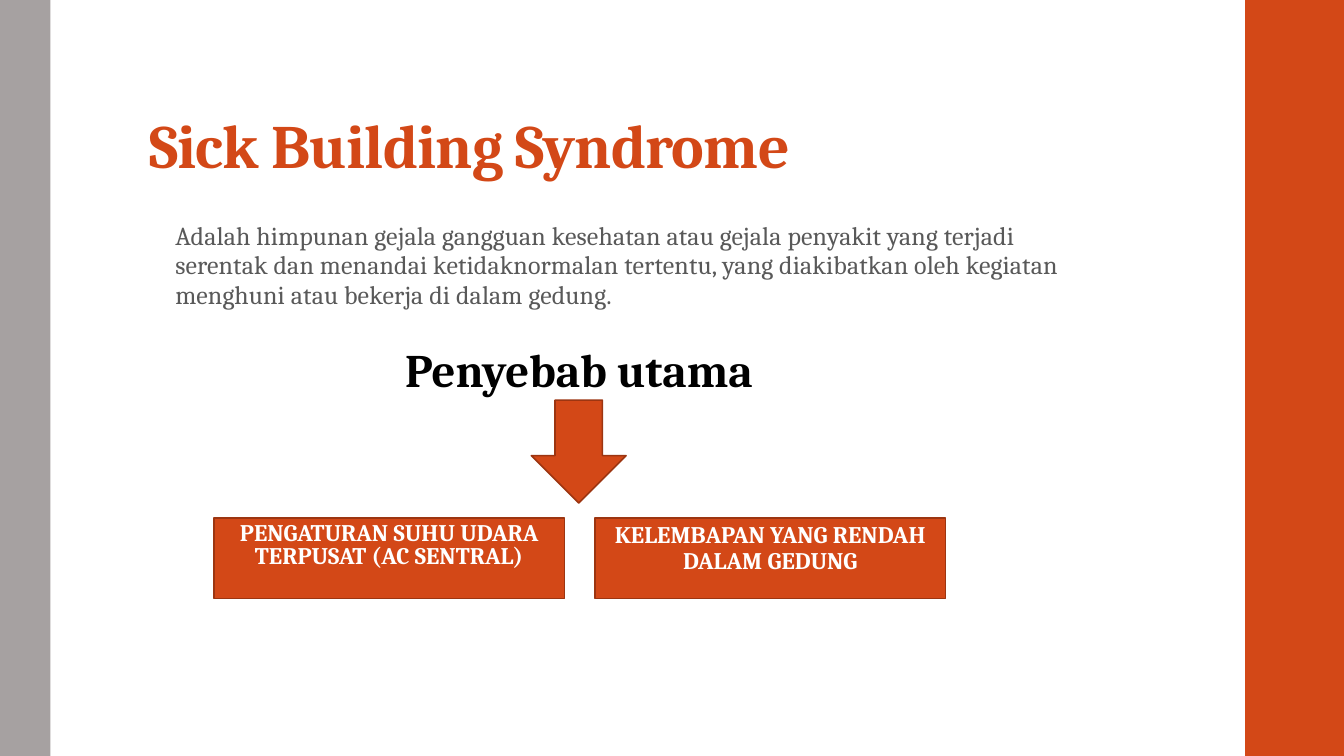
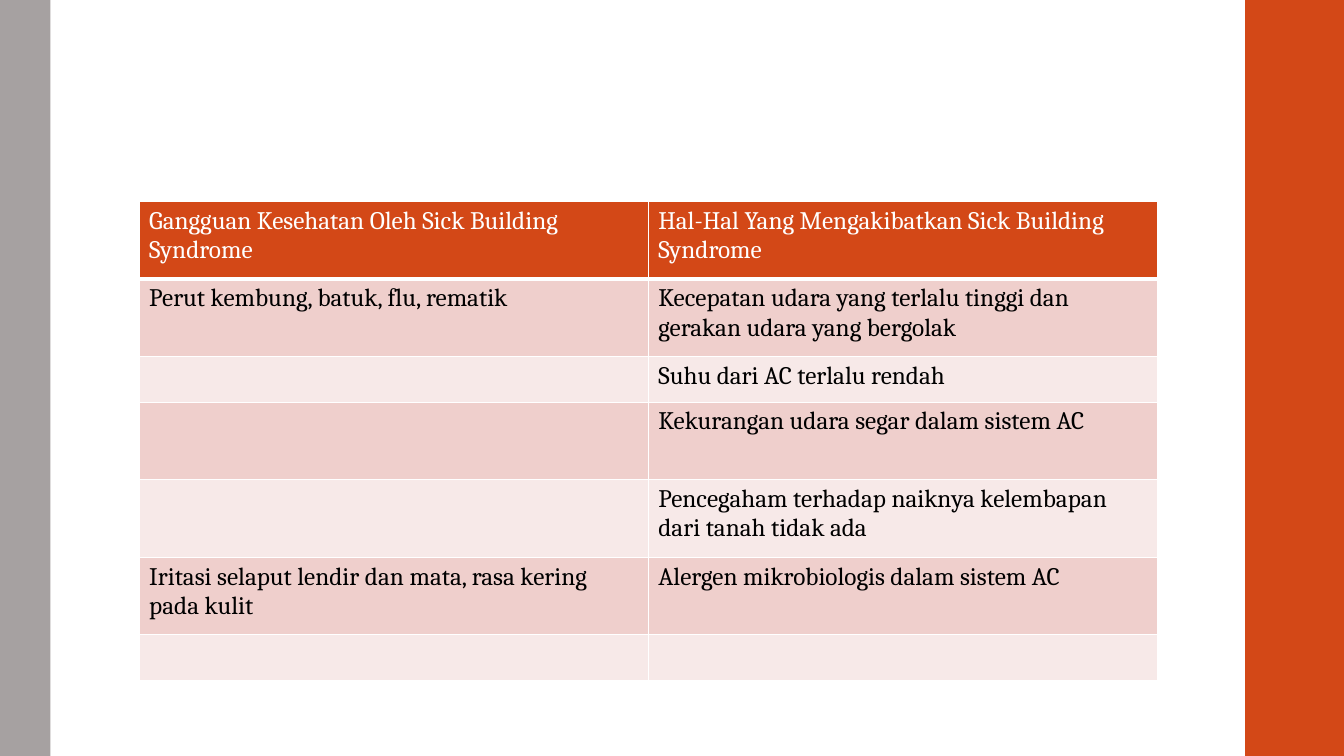
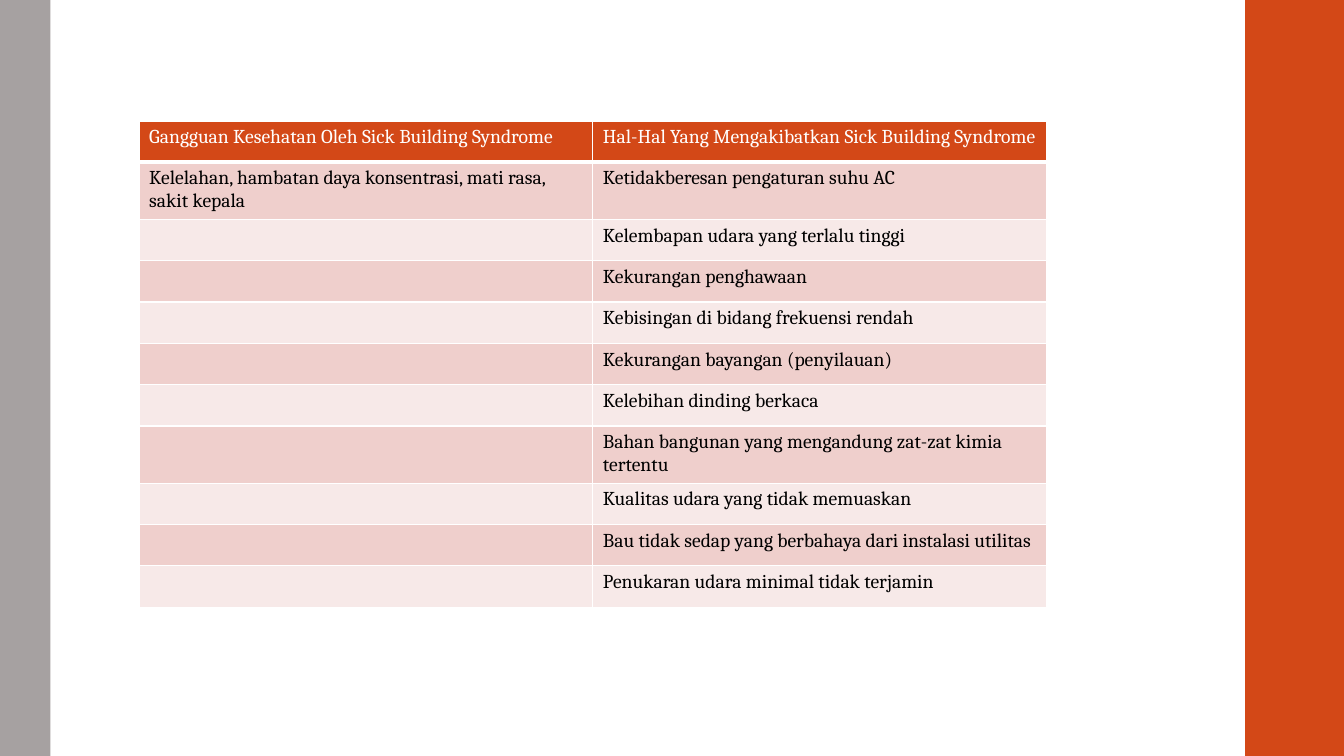
from lxml import etree
from pptx import Presentation
from pptx.dml.color import RGBColor
from pptx.enum.shapes import MSO_SHAPE
from pptx.enum.text import MSO_ANCHOR, PP_ALIGN
from pptx.oxml.ns import qn
from pptx.util import Inches, Pt

ORANGE = RGBColor(0xD3, 0x48, 0x17)
DARK_ORANGE = RGBColor(0x9C, 0x35, 0x11)
GREY = RGBColor(0xA6, 0xA1, 0xA1)
TEXT_GREY = RGBColor(0x59, 0x59, 0x59)
WHITE = RGBColor(0xFF, 0xFF, 0xFF)
BLACK = RGBColor(0, 0, 0)
ROW_TINTS = (RGBColor(0xF7, 0xE9, 0xE8), RGBColor(0xEF, 0xCF, 0xCC))

FONT = "Cambria"
RECTANGLE = MSO_SHAPE.RECTANGLE
DOWN_ARROW = MSO_SHAPE.DOWN_ARROW
TOP, MIDDLE, BOTTOM = MSO_ANCHOR.TOP, MSO_ANCHOR.MIDDLE, MSO_ANCHOR.BOTTOM
LEFT, CENTER = PP_ALIGN.LEFT, PP_ALIGN.CENTER

SLIDE_W, SLIDE_H = 13.33, 7.5
CONTENT_LEFT = 1.38
HEADINGS = (
    "Gangguan Kesehatan Oleh Sick Building Syndrome",
    "Hal-Hal Yang Mengakibatkan Sick Building Syndrome",
)


def style_font(paragraph, size, color, bold=False):
    font = paragraph.font
    font.name, font.size, font.bold = FONT, Pt(size), bold
    font.color.rgb = color


def write(shape, text, size, color, bold=False, align=LEFT, anchor=TOP,
          side=0.1, top=0.05, line_spacing=1.0, tracking=0):
    """Put one paragraph in a shape; side and top are its insets in inches."""
    frame = shape.text_frame
    frame.word_wrap = True
    frame.vertical_anchor = anchor
    frame.margin_left = frame.margin_right = Inches(side)
    frame.margin_top, frame.margin_bottom = Inches(top), Inches(0.05)
    paragraph = frame.paragraphs[0]
    run = paragraph.add_run()
    run.text = text
    paragraph.alignment = align
    paragraph.line_spacing = line_spacing
    style_font(paragraph, size, color, bold)
    if tracking:
        run._r.get_or_add_rPr().set("spc", str(round(tracking * 100)))


def add_text(slide, box, text, size, color, **style):
    label = slide.shapes.add_textbox(*map(Inches, box))
    write(label, text, size, color, **style)


def add_block(slide, kind, box, fill, outline=None):
    block = slide.shapes.add_shape(kind, *map(Inches, box))
    block.shadow.inherit = False
    block.fill.solid()
    block.fill.fore_color.rgb = fill
    if outline is None:
        block.line.fill.background()
    else:
        block.line.color.rgb = outline
        block.line.width = Pt(1.1)
    return block


def add_banded_slide(prs):
    slide = prs.slides.add_slide(prs.slide_layouts[6])
    add_block(slide, RECTANGLE, (12.35, 0, SLIDE_W - 12.35, SLIDE_H), ORANGE)
    add_block(slide, RECTANGLE, (0, 0, 0.5, SLIDE_H), GREY)
    return slide


def add_title(slide, text):
    add_text(slide, (CONTENT_LEFT, 0.32, 10.6, 1.53), text, 44, ORANGE,
             bold=True, anchor=BOTTOM, top=0.03, line_spacing=0.9, tracking=-0.5)


def add_causes(slide, left, top, heading, causes):
    """Heading, arrow and a row of equal cause boxes."""
    add_text(slide, (left + 1.1, top, 5.05, 0.63), heading, 33.3, BLACK,
             bold=True, align=CENTER, anchor=MIDDLE, side=0)
    add_block(slide, DOWN_ARROW, (left + 3.15, top + 0.63, 0.94, 1.02),
              ORANGE, DARK_ORANGE)
    width, gap = 3.48, 0.3
    for i, (cause, line_spacing) in enumerate(causes):
        box = (left + i * (width + gap), top + 1.8, width, 0.8)
        cause_box = add_block(slide, RECTANGLE, box, ORANGE, DARK_ORANGE)
        write(cause_box, cause, 17, WHITE, bold=True, align=CENTER, side=0,
              line_spacing=line_spacing)


def add_borders(cell, bottom_width):
    properties = cell._tc.get_or_add_tcPr()
    for i, edge in enumerate(("lnL", "lnR", "lnT", "lnB")):
        width = bottom_width if edge == "lnB" else 1
        line = etree.Element(qn(f"a:{edge}"), w=str(Pt(width)))
        fill = etree.SubElement(line, qn("a:solidFill"))
        etree.SubElement(fill, qn("a:srgbClr"), val=str(WHITE))
        properties.insert(i, line)


def add_symptom_table(slide, top, column_width, row_heights, size, rows):
    rows = [HEADINGS, *rows]
    table = slide.shapes.add_table(
        len(rows), 2, Inches(CONTENT_LEFT), Inches(top),
        Inches(2 * column_width), Inches(sum(row_heights))).table
    for column in table.columns:
        column.width = Inches(column_width)
    for r, (texts, height) in enumerate(zip(rows, row_heights)):
        table.rows[r].height = Inches(height)
        for c, text in enumerate(texts):
            cell = table.cell(r, c)
            cell.text = text
            style_font(cell.text_frame.paragraphs[0], size, BLACK if r else WHITE)
            cell.fill.solid()
            cell.fill.fore_color.rgb = ROW_TINTS[r % 2] if r else ORANGE
            add_borders(cell, 1 if r else 3)


def build_definition(prs):
    slide = add_banded_slide(prs)
    add_title(slide, "Sick Building Syndrome")
    add_text(slide, (1.64, 2.15, 9, 1.19),
             "Adalah himpunan gejala gangguan kesehatan atau gejala penyakit yang "
             "terjadi serentak dan menandai ketidaknormalan tertentu, yang "
             "diakibatkan oleh kegiatan menghuni atau bekerja di dalam gedung.",
             18.5, TEXT_GREY, line_spacing=0.95, tracking=0.1)
    add_causes(slide, 2.12, 3.34, "Penyebab utama", [
        ("PENGATURAN SUHU UDARA TERPUSAT (AC SENTRAL)", 0.8),
        ("KELEMBAPAN YANG RENDAH DALAM GEDUNG", 0.9),
    ])


def build_illnesses(prs):
    tall, short = 0.77, 0.45
    add_symptom_table(
        add_banded_slide(prs), 2, 5.05,
        (tall, tall, short, tall, tall, tall, short), 18, [
            ("Perut kembung, batuk, flu, rematik",
             "Kecepatan udara yang terlalu tinggi dan gerakan udara yang bergolak"),
            ("", "Suhu dari AC terlalu rendah"),
            ("", "Kekurangan udara segar dalam sistem AC"),
            ("", "Pencegaham terhadap naiknya kelembapan dari tanah tidak ada"),
            ("Iritasi selaput lendir dan mata, rasa kering pada kulit",
             "Alergen mikrobiologis dalam sistem AC"),
            ("", ""),
        ])


def build_fatigue(prs):
    causes = (
        "Ketidakberesan pengaturan suhu AC",
        "Kelembapan udara yang terlalu tinggi",
        "Kekurangan penghawaan",
        "Kebisingan di bidang frekuensi rendah",
        "Kekurangan bayangan (penyilauan)",
        "Kelebihan dinding berkaca",
        "Bahan bangunan yang mengandung zat-zat kimia tertentu",
        "Kualitas udara yang tidak memuaskan",
        "Bau tidak sedap yang berbahaya dari instalasi utilitas",
        "Penukaran udara minimal tidak terjamin",
    )
    symptom = "Kelelahan, hambatan daya konsentrasi, mati rasa, sakit kepala"
    rows = [("" if i else symptom, cause) for i, cause in enumerate(causes)]
    add_symptom_table(add_banded_slide(prs), 1.2, 4.5,
                      [0.41] * (len(rows) + 1), 14, rows)


def main():
    prs = Presentation()
    prs.slide_width, prs.slide_height = Inches(SLIDE_W), Inches(SLIDE_H)
    build_definition(prs)
    build_illnesses(prs)
    build_fatigue(prs)
    prs.save("out.pptx")


if __name__ == "__main__":
    main()
